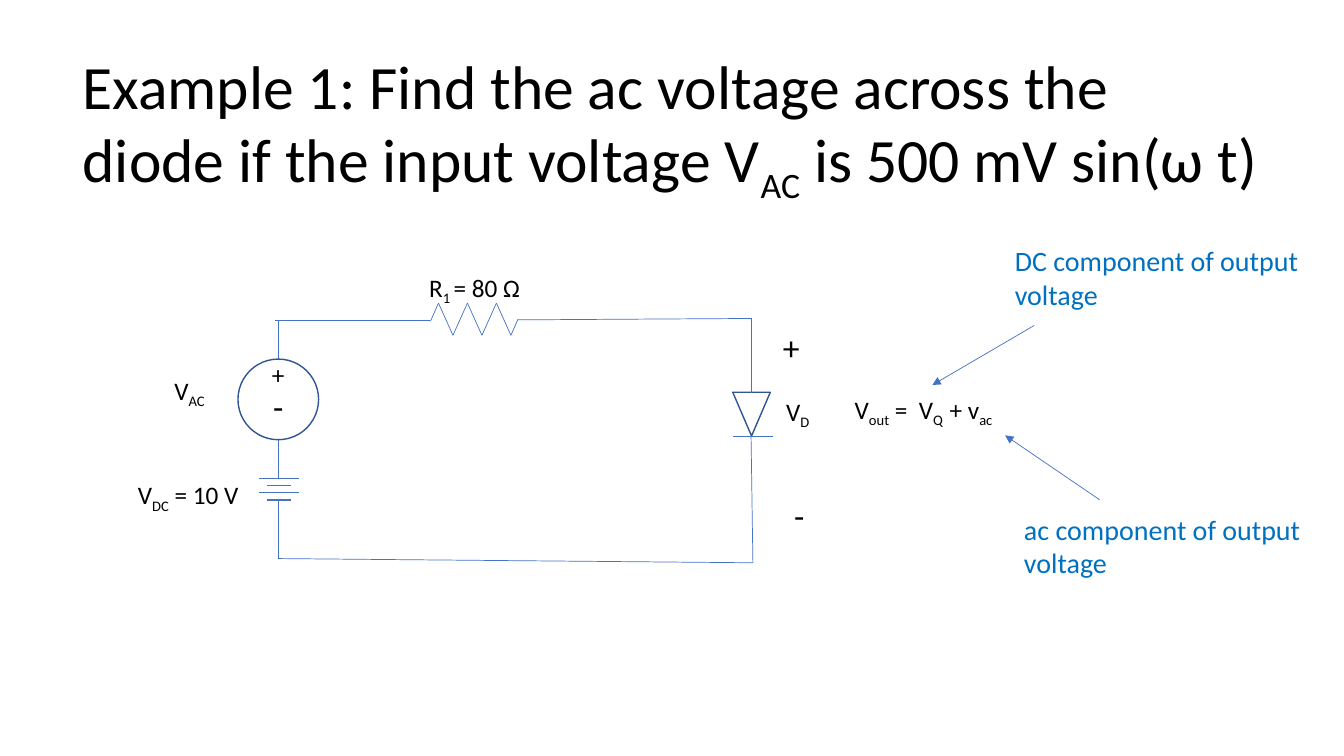
from dataclasses import dataclass
from itertools import pairwise

from lxml.etree import SubElement
from pptx import Presentation
from pptx.dml.color import RGBColor
from pptx.enum.shapes import MSO_CONNECTOR, MSO_SHAPE
from pptx.enum.text import MSO_ANCHOR, MSO_AUTO_SIZE, PP_ALIGN
from pptx.oxml.ns import qn
from pptx.util import Pt

FONT = "Calibri"
BLACK, BLUE = "000000", "0070C0"
WIRE, OUTLINE = "4472C4", "325491"

Point = tuple[float, float]


@dataclass(frozen=True)
class Label:
    left: float
    top: float
    width: float
    height: float
    texts: tuple[str, ...]  # normal and subscript text in turn
    size: float = 18
    color: str = BLACK


@dataclass(frozen=True)
class Line:
    start: Point
    end: Point
    width: float = 0.5
    arrow: bool = False


LABELS = [
    Label(187.2, 253.4, 26, 29, ("+",)),
    Label(188, 272.2, 26, 36, ("-",), 24),
    Label(91.4, 339, 92.2, 29, ("V", "DC", " = 10 V")),
    Label(299.5, 190.8, 124.6, 29, ("R", "1 ", "= 80 Ω")),
    Label(554.4, 279.4, 37.4, 29, ("V", "D")),
    Label(603.4, 278, 121, 29, ("V", "out", " =  V", "Q  ", "+ v", "ac")),
    Label(560.2, 350, 26, 36, ("-",), 24),
    Label(117.4, 264.2, 51.8, 29, ("V", "AC")),
    Label(724.3, 362.2, 226, 55.4, ("ac component of output voltage",), 20, BLUE),
    Label(717.8, 170.6, 226, 55.4, ("DC component of output voltage",), 20, BLUE),
    Label(552.2, 229.7, 26, 36, ("+",), 24),
]

WIRES = [
    Line((198.5, 228.5), (198.5, 256.5)),
    Line((198.5, 314.5), (198.5, 341.5)),
    Line((198.5, 357), (198.5, 399)),
    Line((196.6, 229), (307.5, 229)),
    Line((370, 228.5), (536.5, 227.5)),
    Line((536.5, 280.5), (536.5, 227.5)),
    Line((536.5, 312), (537.8, 402)),
    Line((198.5, 399), (537.8, 402)),
]
ARROWS = [
    Line((785.5, 357), (718, 311), arrow=True),
    Line((738.7, 232.5), (666, 275), arrow=True),
]

PEAK_STEP = 10.35
RESISTOR = [
    (307.5, 229.5),
    *((313.2 + i * PEAK_STEP, 239.5 if i % 2 else 216.5) for i in range(6)),
    (370, 228),
]
RESISTOR_LINES = [Line(a, b) for a, b in pairwise(RESISTOR)]

PLATE_CENTER, PLATE_TOP, PLATE_GAP = 199.3, 341.9, 5.05
BATTERY_LINES = []
for i in range(4):
    half, y = (8.7 if i % 2 else 14.3), PLATE_TOP + i * PLATE_GAP
    BATTERY_LINES.append(Line((PLATE_CENTER - half, y), (PLATE_CENTER + half, y), 1))


def rgb(color: str) -> RGBColor:
    return RGBColor.from_string(color)


def add_runs(p, texts: tuple[str, ...], size: float, color: str) -> None:
    """Add the texts as runs, every second one as a subscript."""
    for i, text in enumerate(texts):
        r = p.add_run()
        r.text = text
        r.font.name = FONT
        r.font.size = Pt(size)
        r.font.color.rgb = rgb(color)
        if i % 2:
            r.font._element.set("baseline", "-25000")


def add_label(shapes, label: Label) -> None:
    box = shapes.add_textbox(
        Pt(label.left), Pt(label.top), Pt(label.width), Pt(label.height)
    )
    tf = box.text_frame
    tf.word_wrap = True
    tf.auto_size = MSO_AUTO_SIZE.SHAPE_TO_FIT_TEXT
    add_runs(tf.paragraphs[0], label.texts, label.size, label.color)


def add_line(shapes, line: Line) -> None:
    (x1, y1), (x2, y2) = line.start, line.end
    c = shapes.add_connector(MSO_CONNECTOR.STRAIGHT, Pt(x1), Pt(y1), Pt(x2), Pt(y2))
    c.line.width = Pt(line.width)
    c.line.color.rgb = rgb(WIRE)
    if line.arrow:
        SubElement(c.line._get_or_add_ln(), qn("a:tailEnd"), type="triangle")
    SubElement(c._element.spPr, qn("a:effectLst"))


def add_outline(
    shapes, kind: MSO_SHAPE, left: float, top: float, width: float, height: float
):
    s = shapes.add_shape(kind, Pt(left), Pt(top), Pt(width), Pt(height))
    s.shadow.inherit = False
    s.fill.background()
    s.line.color.rgb = rgb(OUTLINE)
    s.line.width = Pt(1)
    return s


def set_title(title, texts: tuple[str, ...]) -> None:
    title.left, title.top = Pt(51.8), Pt(28.8)
    title.width, title.height = Pt(855.4), Pt(123.8)
    tf = title.text_frame
    tf.word_wrap = True
    tf.auto_size = MSO_AUTO_SIZE.NONE
    tf.vertical_anchor = MSO_ANCHOR.MIDDLE
    p = tf.paragraphs[0]
    p.alignment = PP_ALIGN.LEFT
    p.line_spacing = 0.9
    add_runs(p, texts, 44, BLACK)


def main() -> None:
    prs = Presentation()
    prs.slide_width, prs.slide_height = Pt(960), Pt(540)
    slide = prs.slides.add_slide(prs.slide_layouts[5])
    shapes = slide.shapes
    set_title(
        shapes.title,
        (
            "Example 1: Find the ac voltage across the diode if the input voltage V",
            "AC",
            " is 500 mV sin(ω t)",
        ),
    )

    add_outline(shapes, MSO_SHAPE.OVAL, 170, 256.5, 57.6, 57.6)
    diode = shapes.add_group_shape().shapes
    triangle = add_outline(
        diode, MSO_SHAPE.ISOSCELES_TRIANGLE, 523.4, 280.2, 26.8, 31.2
    )
    triangle.rotation = 180
    add_line(diode, Line((552.2, 311.4), (523.4, 311.4)))

    for symbol_lines in (RESISTOR_LINES, BATTERY_LINES):
        symbol = shapes.add_group_shape().shapes
        for line in symbol_lines:
            add_line(symbol, line)
    for line in WIRES + ARROWS:
        add_line(shapes, line)
    for label in LABELS:
        add_label(shapes, label)

    prs.save("out.pptx")


if __name__ == "__main__":
    main()
